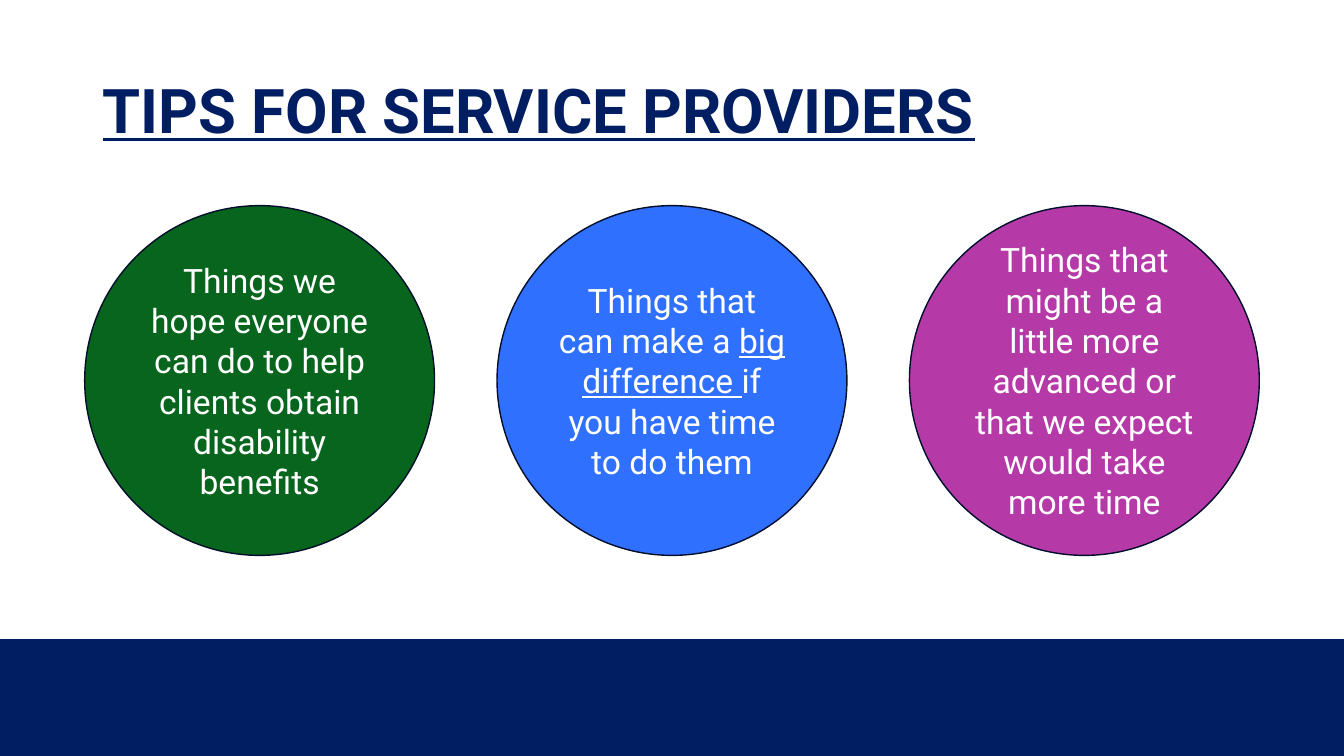
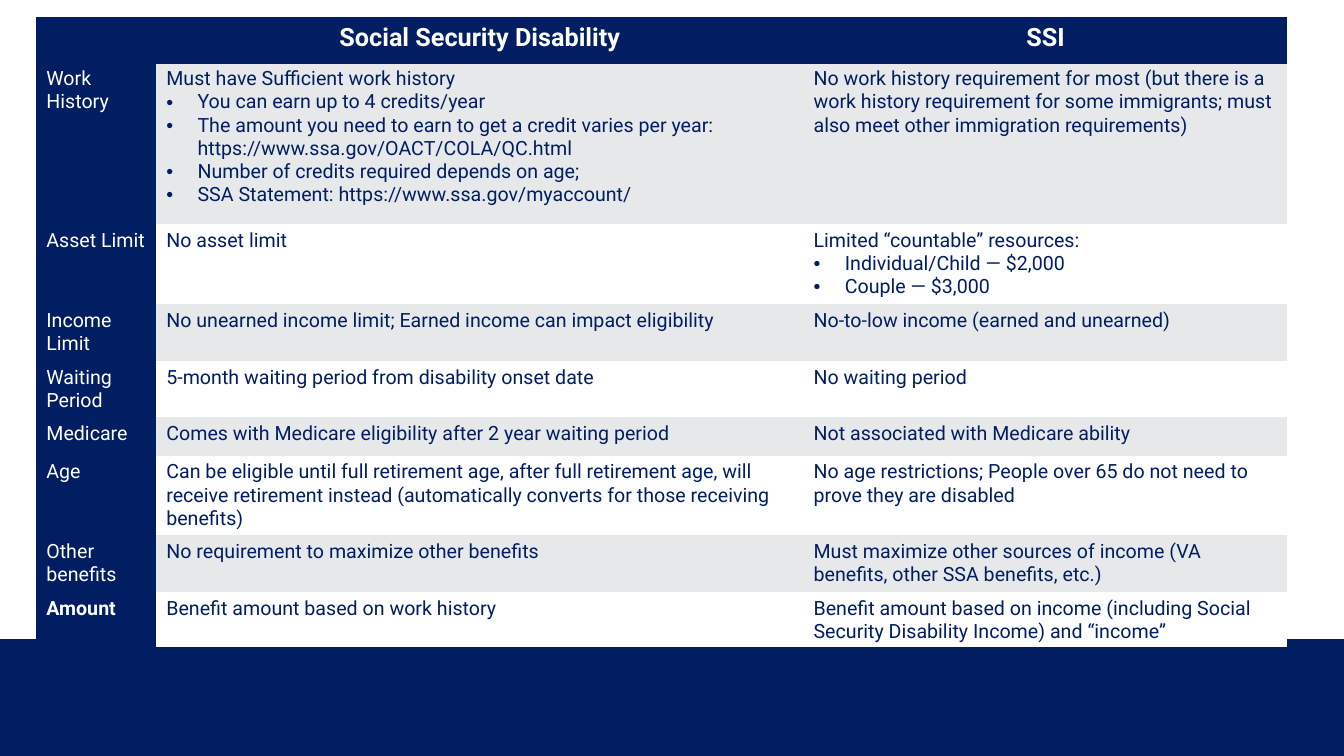
"""Build two slides on disability benefits: tips by effort, and a programme comparison."""
from dataclasses import dataclass

from lxml.etree import SubElement
from pptx import Presentation
from pptx.dml.color import RGBColor
from pptx.enum.shapes import MSO_SHAPE
from pptx.enum.text import MSO_ANCHOR, MSO_AUTO_SIZE, PP_ALIGN
from pptx.oxml.ns import qn
from pptx.presentation import Presentation as Deck
from pptx.shapes.autoshape import Shape
from pptx.slide import Slide
from pptx.table import _Cell as Cell
from pptx.text.text import Font, _Paragraph as Paragraph
from pptx.util import Inches, Pt


@dataclass(frozen=True)
class Theme:
    font: str = "Roboto"
    navy: str = "001E61"
    white: str = "FFFFFF"
    stripe: str = "E7E8EA"
    outline: str = "000D2B"
    green: str = "07651D"
    blue: str = "3070FF"
    purple: str = "B539A6"
    title_size: int = 44
    tip_size: int = 24
    header_size: int = 18
    cell_size: int = 14


@dataclass(frozen=True)
class Phrase:
    text: str
    underlined: bool = False


@dataclass(frozen=True)
class Tip:
    fill: str
    phrases: tuple[Phrase, ...]


@dataclass(frozen=True)
class Entry:
    lead: str
    bullets: tuple[str, ...] = ()


@dataclass(frozen=True)
class Topic:
    label: str
    disability: Entry
    ssi: Entry
    height: float
    bold: bool = False


THEME = Theme()
SLIDE_WIDTH, SLIDE_HEIGHT = 13.33, 7.5
BAND_TOP = 6.34
CIRCLE_LEFT, CIRCLE_TOP, CIRCLE_SIZE, CIRCLE_PITCH = 0.84, 2.04, 3.47, 4.09
TABLE_LEFT, TABLE_TOP = 0.36, 0.18
COLUMN_WIDTHS = (1.19, 6.42, 4.8)
HEADER_HEIGHT = 0.44
BULLET_INDENT = 0.31
BORDER_WIDTH = 2
PLAIN_TABLE_STYLE = "{2D5ABB26-0587-4C30-8999-92F81FD0307C}"

TIPS = (
    Tip(THEME.green, (
        Phrase("Things we hope everyone can do to help clients obtain disability benefits"),
    )),
    Tip(THEME.blue, (
        Phrase("Things that can make a "),
        Phrase("big difference ", underlined=True),
        Phrase("if you have time to do them"),
    )),
    Tip(THEME.purple, (
        Phrase("Things that might be a little more advanced or that we expect would take more time"),
    )),
)

HEADINGS = ("", "Social Security Disability", "SSI")
TOPICS = (
    Topic(
        "Work History",
        Entry("Must have Sufficient work history", (
            "You can earn up to 4 credits/year",
            "The amount you need to earn to get a credit varies per year: "
            "https://www.ssa.gov/OACT/COLA/QC.html",
            "Number of credits required depends on age;",
            "SSA Statement: https://www.ssa.gov/myaccount/",
        )),
        Entry("No work history requirement for most (but there is a work history requirement "
              "for some immigrants; must also meet other immigration requirements)"),
        1.6,
    ),
    Topic(
        "Asset Limit",
        Entry("No asset limit"),
        Entry("Limited “countable” resources:",
              ("Individual/Child — $2,000", "Couple — $3,000")),
        0.8,
    ),
    Topic(
        "Income Limit",
        Entry("No unearned income limit; Earned income can impact eligibility"),
        Entry("No-to-low income (earned and unearned)"),
        0.56,
    ),
    Topic(
        "Waiting Period",
        Entry("5-month waiting period from disability onset date"),
        Entry("No waiting period"),
        0.56,
    ),
    Topic(
        "Medicare",
        Entry("Comes with Medicare eligibility after 2 year waiting period"),
        Entry("Not associated with Medicare ability"),
        0.38,
    ),
    Topic(
        "Age",
        Entry("Can be eligible until full retirement age, after full retirement age, will receive "
              "retirement instead (automatically converts for those receiving benefits)"),
        Entry("No age restrictions; People over 65 do not need to prove they are disabled"),
        0.78,
    ),
    Topic(
        "Other benefits",
        Entry("No requirement to maximize other benefits"),
        Entry("Must maximize other sources of income (VA benefits, other SSA benefits, etc.)"),
        0.56,
    ),
    Topic(
        "Amount",
        Entry("Benefit amount based on work history"),
        Entry("Benefit amount based on income (including Social Security Disability Income) "
              "and “income”"),
        0.54,
        bold=True,
    ),
)


def style_font(font: Font, size: int, color: str, bold: bool = False,
               underlined: bool = False) -> None:
    """Apply the theme font with the given size, colour and emphasis."""
    font.name = THEME.font
    font.size = Pt(size)
    font.color.rgb = RGBColor.from_string(color)
    font.bold = bold
    font.underline = underlined


def fill_shape(shape: Shape, color: str) -> None:
    """Give a shape a flat fill without shadow."""
    shape.shadow.inherit = False
    shape.fill.solid()
    shape.fill.fore_color.rgb = RGBColor.from_string(color)


def add_master_band(deck: Deck, slide: Slide) -> None:
    """Draw the bottom band and place it on the master that all slides share."""
    band = slide.shapes.add_shape(
        MSO_SHAPE.RECTANGLE, 0, Inches(BAND_TOP),
        Inches(SLIDE_WIDTH), Inches(SLIDE_HEIGHT - BAND_TOP))
    fill_shape(band, THEME.navy)
    band.line.fill.background()
    band.element.nvSpPr.cNvPr.set("id", "100")
    deck.slide_master.element.cSld.spTree.insert(2, band.element)


def set_title(slide: Slide, text: str) -> None:
    """Place and format the slide title."""
    title = slide.shapes.title
    title.left, title.top = Inches(0.92), Inches(0.4)
    title.width, title.height = Inches(11.5), Inches(1.45)
    frame = title.text_frame
    frame.text = text
    frame.auto_size = MSO_AUTO_SIZE.NONE
    frame.vertical_anchor = MSO_ANCHOR.MIDDLE
    paragraph = frame.paragraphs[0]
    paragraph.alignment = PP_ALIGN.LEFT
    paragraph.line_spacing = 0.9
    style_font(paragraph.runs[0].font, THEME.title_size, THEME.navy, bold=True, underlined=True)


def add_tip(slide: Slide, tip: Tip, left: float) -> None:
    """Draw one tip circle with its phrases."""
    circle = slide.shapes.add_shape(
        MSO_SHAPE.OVAL, Inches(left), Inches(CIRCLE_TOP), Inches(CIRCLE_SIZE), Inches(CIRCLE_SIZE))
    fill_shape(circle, tip.fill)
    circle.line.color.rgb = RGBColor.from_string(THEME.outline)
    circle.line.width = Pt(1)
    frame = circle.text_frame
    frame.word_wrap = True
    frame.vertical_anchor = MSO_ANCHOR.MIDDLE
    paragraph = frame.paragraphs[0]
    paragraph.alignment = PP_ALIGN.CENTER
    for phrase in tip.phrases:
        run = paragraph.add_run()
        run.text = phrase.text
        style_font(run.font, THEME.tip_size, THEME.white, underlined=phrase.underlined)


def add_bullet(paragraph: Paragraph) -> None:
    """Give a paragraph a hanging bullet."""
    properties = paragraph._p.get_or_add_pPr()
    properties.set("marL", str(Inches(BULLET_INDENT)))
    properties.set("indent", str(-Inches(BULLET_INDENT)))
    SubElement(properties, qn("a:buFont")).set("typeface", "Arial")
    SubElement(properties, qn("a:buChar")).set("char", "•")


def format_cell(cell: Cell, fill: str, borders: tuple[str, ...] = ()) -> None:
    """Set the fill of a cell and navy rules on the named sides."""
    properties = cell._tc.get_or_add_tcPr()
    for side in borders:
        rule = SubElement(properties, qn(f"a:{side}"))
        rule.set("w", str(Pt(BORDER_WIDTH)))
        rule_fill = SubElement(rule, qn("a:solidFill"))
        SubElement(rule_fill, qn("a:srgbClr")).set("val", THEME.navy)
    cell.fill.solid()
    cell.fill.fore_color.rgb = RGBColor.from_string(fill)


def write_entry(cell: Cell, entry: Entry, color: str, bold: bool = False) -> None:
    """Write a lead line and its bullets into a cell."""
    frame = cell.text_frame
    frame.text = "\n".join((entry.lead, *entry.bullets))
    for index, paragraph in enumerate(frame.paragraphs):
        if index:
            add_bullet(paragraph)
        style_font(paragraph.runs[0].font, THEME.cell_size, color, bold)


def add_comparison(slide: Slide) -> None:
    """Draw the table that compares the two programmes."""
    heights = (HEADER_HEIGHT, *(topic.height for topic in TOPICS))
    frame = slide.shapes.add_table(
        len(heights), len(COLUMN_WIDTHS), Inches(TABLE_LEFT), Inches(TABLE_TOP),
        Inches(sum(COLUMN_WIDTHS)), Inches(sum(heights)))
    table = frame.table
    table.horz_banding = False
    table._tbl.tblPr.find(qn("a:tableStyleId")).text = PLAIN_TABLE_STYLE
    for column, width in zip(table.columns, COLUMN_WIDTHS):
        column.width = Inches(width)
    for row, height in zip(table.rows, heights):
        row.height = Inches(height)

    for column, heading in enumerate(HEADINGS):
        cell = table.cell(0, column)
        format_cell(cell, THEME.navy, ("lnT", "lnB"))
        paragraph = cell.text_frame.paragraphs[0]
        paragraph.text = heading
        paragraph.alignment = PP_ALIGN.CENTER
        style_font(paragraph.font, THEME.header_size, THEME.white, bold=True)
        for run in paragraph.runs:
            style_font(run.font, THEME.header_size, THEME.white, bold=True)

    for row, topic in enumerate(TOPICS, start=1):
        stripe = THEME.stripe if row % 2 else THEME.white
        borders = ("lnB",) if row == len(TOPICS) else ()
        for column, entry in enumerate((Entry(topic.label), topic.disability, topic.ssi)):
            is_label = column == 0
            cell = table.cell(row, column)
            format_cell(cell, THEME.navy if is_label else stripe, borders)
            write_entry(cell, entry, THEME.white if is_label else THEME.navy,
                        bold=is_label and topic.bold)


def main() -> None:
    """Build and save the presentation."""
    deck = Presentation()
    deck.slide_width, deck.slide_height = Inches(SLIDE_WIDTH), Inches(SLIDE_HEIGHT)
    title_only, blank = deck.slide_layouts[5], deck.slide_layouts[6]

    tips_slide = deck.slides.add_slide(title_only)
    add_master_band(deck, tips_slide)
    set_title(tips_slide, "TIPS FOR SERVICE PROVIDERS")
    for index, tip in enumerate(TIPS):
        add_tip(tips_slide, tip, CIRCLE_LEFT + index * CIRCLE_PITCH)

    add_comparison(deck.slides.add_slide(blank))
    deck.save("out.pptx")


if __name__ == "__main__":
    main()
